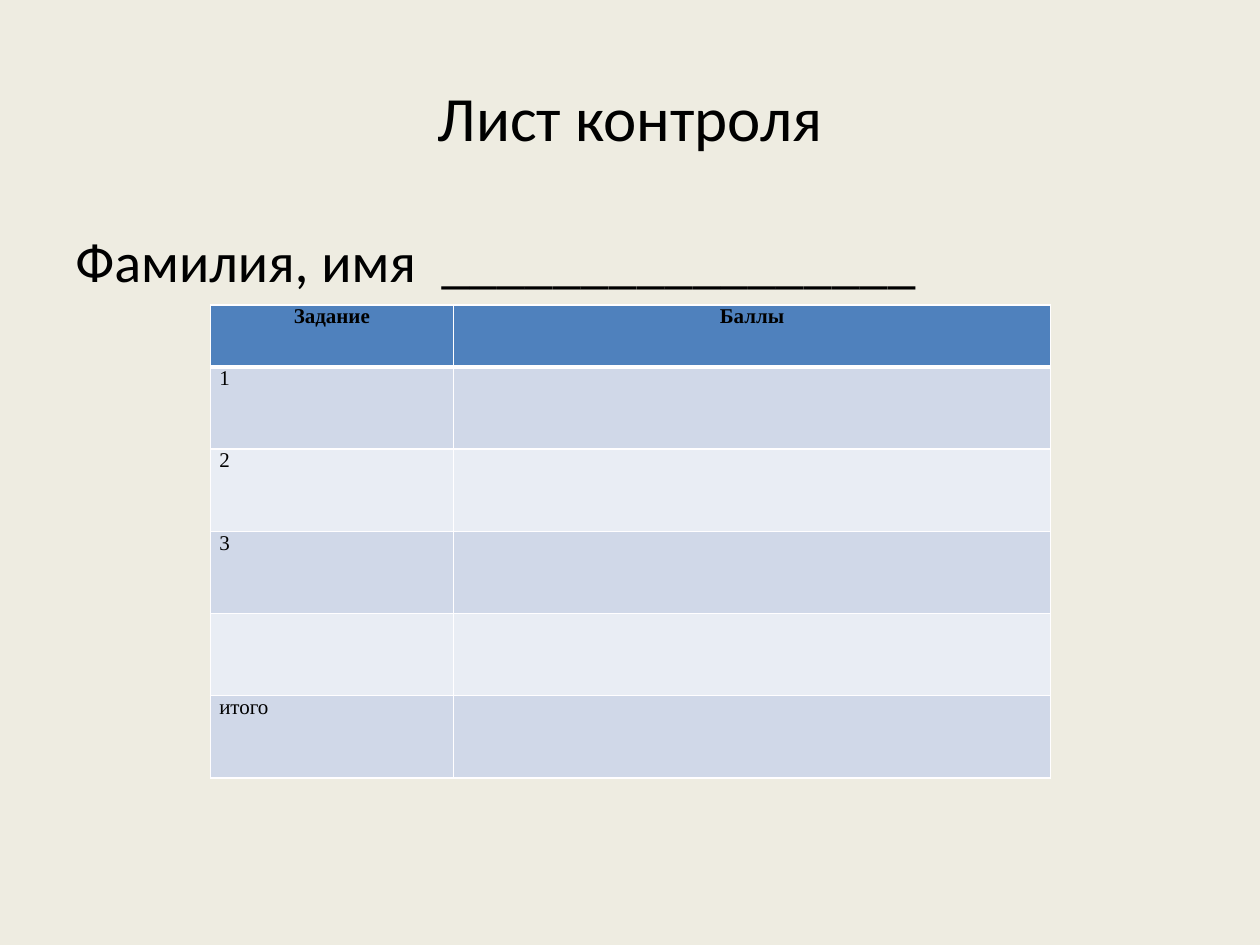
import lxml.etree
import pptx
import pptx.dml.color
import pptx.enum.text
import pptx.oxml.ns
import pptx.util

Cm = pptx.util.Cm
Pt = pptx.util.Pt
ALIGN = pptx.enum.text.PP_ALIGN
ANCHOR = pptx.enum.text.MSO_ANCHOR
BLACK, PAPER, HEADER, BORDER = "000000", "EEECE1", "4F81BD", "FFFEFF"
BANDS = ("D0D8E8", "E9EDF4")
SCORES = (("Задание", "Баллы"), ("1", ""), ("2", ""), ("3", ""), ("", ""), ("итого", ""))


def paint(color_format, color):
    """Set a colour from a hex string."""
    color_format.rgb = pptx.dml.color.RGBColor.from_string(color)


def style(paragraph, font, size, align, bold=False):
    """Set the font and alignment of a paragraph."""
    paragraph.alignment = align
    paragraph.font.name = font
    paragraph.font.size = Pt(size)
    paragraph.font.bold = bold
    paint(paragraph.font.color, BLACK)


def add_line(slide, box, text, size, align, anchor):
    """Place one line of text in a box."""
    frame = slide.shapes.add_textbox(*map(Cm, box)).text_frame
    frame.word_wrap = True
    frame.vertical_anchor = anchor
    frame.text = text
    style(frame.paragraphs[0], "Calibri", size, align)


def add_borders(cell, bottom):
    """Draw the four borders of a cell, with its own bottom width."""
    properties = cell._tc.get_or_add_tcPr()
    widths = {"lnL": 1, "lnR": 1, "lnT": 1, "lnB": bottom}
    for position, (side, width) in enumerate(widths.items()):
        line = lxml.etree.Element(pptx.oxml.ns.qn("a:" + side), w=str(Pt(width)))
        fill = lxml.etree.SubElement(line, pptx.oxml.ns.qn("a:solidFill"))
        lxml.etree.SubElement(fill, pptx.oxml.ns.qn("a:srgbClr"), val=BORDER)
        properties.insert(position, line)


def fill_cell(cell, text, row):
    """Write and colour one cell of the score table."""
    is_header = row == 0
    cell.margin_left = cell.margin_right = Cm(0.18)
    cell.margin_top = cell.margin_bottom = 0
    cell.text = text
    align = ALIGN.CENTER if is_header else ALIGN.LEFT
    style(cell.text_frame.paragraphs[0], "Times New Roman", 12, align, is_header)
    cell.fill.solid()
    paint(cell.fill.fore_color, HEADER if is_header else BANDS[(row - 1) % 2])
    add_borders(cell, 3 if is_header else 1)


def add_scores(slide, box):
    """Place the score table in a box."""
    left, top, width, height = box
    task_width, header_height = 4.9, 1.25
    scores = slide.shapes.add_table(len(SCORES), 2, *map(Cm, box)).table
    scores.columns[0].width = Cm(task_width)
    scores.columns[1].width = Cm(width - task_width)
    row_height = (height - header_height) / (len(SCORES) - 1)
    for row, texts in enumerate(SCORES):
        scores.rows[row].height = Cm(row_height if row else header_height)
        for column, text in enumerate(texts):
            fill_cell(scores.cell(row, column), text, row)


def main():
    """Build the control sheet slide."""
    deck = pptx.Presentation()
    deck.slide_width, deck.slide_height = Cm(25.4), Cm(19.05)
    slide = deck.slides.add_slide(deck.slide_layouts[6])
    slide.background.fill.solid()
    paint(slide.background.fill.fore_color, PAPER)
    add_line(slide, (1.27, 0.76, 22.86, 3.18), "Лист контроля", 36,
             ALIGN.CENTER, ANCHOR.MIDDLE)
    add_line(slide, (1.27, 4.45, 22.86, 1.6), "Фамилия, имя  _________________", 32,
             ALIGN.LEFT, ANCHOR.TOP)
    add_scores(slide, (4.24, 6.15, 16.94, 9.53))
    deck.save("out.pptx")


if __name__ == "__main__":
    main()
